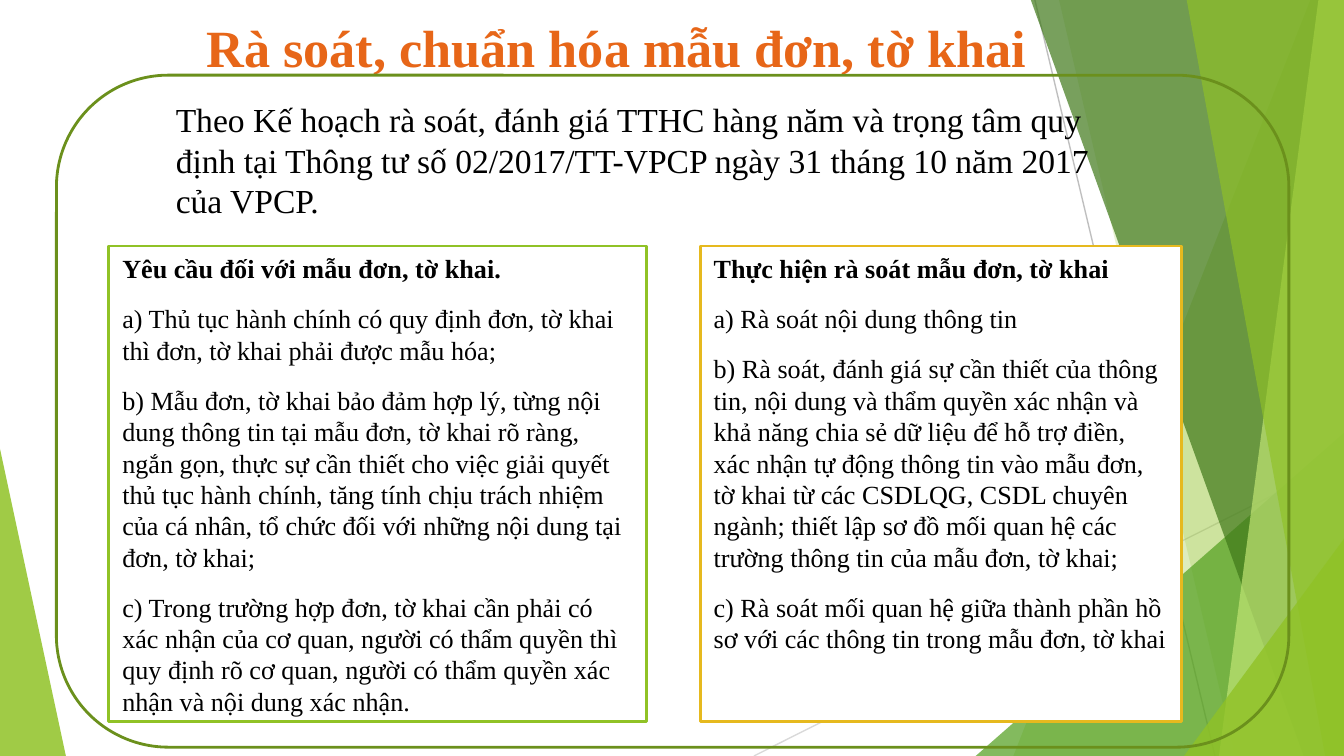
from dataclasses import dataclass
from lxml.etree import SubElement
from pptx import Presentation
from pptx.dml.color import RGBColor
from pptx.enum.shapes import MSO_CONNECTOR, MSO_SHAPE
from pptx.enum.text import MSO_ANCHOR, MSO_AUTO_SIZE, PP_ALIGN
from pptx.oxml.ns import qn
from pptx.util import Inches, Pt


@dataclass(frozen=True)
class Theme:
    """Colours, font and type sizes of the slide."""
    font: str = "Times New Roman"
    ink: str = "000000"
    paper: str = "FFFFFF"
    title: str = "E76618"
    frame: str = "6B901C"
    lime: str = "90C226"
    green: str = "54A021"
    dark: str = "3F7819"
    pale: str = "C0E474"
    gold: str = "E6B91E"
    rules: tuple = ("D9D9D9", "BFBFBF")
    head: int = 28
    lead: int = 18
    body: int = 14
    gap: int = 10
    thin: float = 0.75
    edge: float = 1.5


THEME = Theme()
WIDE = 10
HIGH = WIDE * 9 / 16
LEFT = (
    "Yêu cầu đối với mẫu đơn, tờ khai.",
    "a) Thủ tục hành chính có quy định đơn, tờ khai thì đơn, tờ khai phải được mẫu hóa;",
    "b) Mẫu đơn, tờ khai bảo đảm hợp lý, từng nội dung thông tin tại mẫu đơn, tờ khai "
    "rõ ràng, ngắn gọn, thực sự cần thiết cho việc giải quyết thủ tục hành chính, tăng "
    "tính chịu trách nhiệm của cá nhân, tổ chức đối với những nội dung tại đơn, tờ khai;",
    "c) Trong trường hợp đơn, tờ khai cần phải có xác nhận của cơ quan, người có thẩm "
    "quyền thì quy định rõ cơ quan, người có thẩm quyền xác nhận và nội dung xác nhận.",
)
RIGHT = (
    "Thực hiện rà soát mẫu đơn, tờ khai",
    "a) Rà soát nội dung thông tin",
    "b) Rà soát, đánh giá sự cần thiết của thông tin, nội dung và thẩm quyền xác nhận và "
    "khả năng chia sẻ dữ liệu để hỗ trợ điền, xác nhận tự động thông tin vào mẫu đơn, tờ "
    "khai từ các CSDLQG, CSDL chuyên ngành; thiết lập sơ đồ mối quan hệ các trường thông "
    "tin của mẫu đơn, tờ khai;",
    "c) Rà soát mối quan hệ giữa thành phần hồ sơ với các thông tin trong mẫu đơn, tờ khai",
)
TITLE = "Rà soát, chuẩn hóa mẫu đơn, tờ khai"
LEAD = ("Theo Kế hoạch rà soát, đánh giá TTHC hàng năm và trọng tâm quy định tại Thông tư "
        "số 02/2017/TT-VPCP ngày 31 tháng 10 năm 2017 của VPCP.")


def tint(code):
    """Turn a hex code into a colour."""
    return RGBColor.from_string(code)


def place(shape, box):
    """Move and size a shape to a box in inches."""
    shape.left, shape.top, shape.width, shape.height = map(Inches, box)


def write(para, text, size, code, bold=False):
    """Add one formatted run to a paragraph."""
    run = para.add_run()
    run.text = text
    run.font.name = THEME.font
    run.font.size = Pt(size)
    run.font.bold = bold
    run.font.color.rgb = tint(code)


def wedge(slide, box, points, code, alpha):
    """Draw a see-through polygon from points relative to the box."""
    spots = [(Inches(box[0] + x), Inches(box[1] + y)) for x, y in points]
    build = slide.shapes.build_freeform(*spots[0])
    build.add_line_segments(spots[1:], close=True)
    shape = build.convert_to_shape()
    shape.shadow.inherit = False
    shape.fill.solid()
    shape.fill.fore_color.rgb = tint(code)
    shape.line.fill.background()
    fill = shape._element.spPr.find(qn("a:solidFill"))
    SubElement(fill[0], qn("a:alpha"), val=str(alpha * 1000))


def rule(slide, box, ends, code):
    """Draw a thin line between two points relative to the box."""
    (x1, y1), (x2, y2) = ends
    spots = (box[0] + x1, box[1] + y1, box[0] + x2, box[1] + y2)
    line = slide.shapes.add_connector(MSO_CONNECTOR.STRAIGHT, *map(Inches, spots))
    line.line.color.rgb = tint(code)
    line.line.width = Pt(THEME.thin)
    SubElement(line._element.spPr, qn("a:effectLst"))


def decor(slide, box):
    """Place the facets and fine lines within the box."""
    wide, high = box[2:]
    wedge(slide, box, [(0, 3.34), (0.49, high), (0, high)], THEME.lime, 85)
    lines = [((5.61, high), (wide, 3.42)), ((7.7, 0), (9.04, high))]
    for ends, code in zip(lines, THEME.rules):
        rule(slide, box, ends, code)
    facets = [
        (9.75, 0, 7.54, THEME.lime, 30),
        (7.88, 0, 9.19, THEME.lime, 20),
        (wide, 3.22, 7.26, THEME.green, 72),
        (7.67, 0, 9.7, THEME.dark, 70),
        (9.81, 0, 9.07, THEME.pale, 70),
        (8.83, 0, 9.86, THEME.lime, 65),
        (wide, 4.01, 8.81, THEME.lime, 80),
    ]
    for top, rise, foot, code, alpha in facets:
        points = [(top, rise), (foot, high), (wide, high), (wide, rise)]
        wedge(slide, box, points, code, alpha)


def panel(slide, holder, box, lines, code):
    """Fill a body placeholder as a bordered panel with a bold heading."""
    slide.shapes._spTree.append(holder._element)
    place(holder, box)
    holder.fill.solid()
    holder.fill.fore_color.rgb = tint(THEME.paper)
    holder.line.color.rgb = tint(code)
    holder.line.width = Pt(THEME.edge)
    frame = holder.text_frame
    frame.auto_size = MSO_AUTO_SIZE.NONE
    for i, text in enumerate(lines):
        para = frame.add_paragraph() if i else frame.paragraphs[0]
        para.space_before = Pt(THEME.gap)
        props = para._p.get_or_add_pPr()
        props.set("marL", "0")
        props.set("indent", "0")
        SubElement(props, qn("a:buNone"))
        write(para, text, THEME.body, THEME.ink, bold=i == 0)


def header(slide, box):
    """Place the slide title in the box."""
    title = slide.shapes.title
    slide.shapes._spTree.append(title._element)
    place(title, box)
    title.text_frame.auto_size = MSO_AUTO_SIZE.NONE
    title.text_frame.vertical_anchor = MSO_ANCHOR.TOP
    para = title.text_frame.paragraphs[0]
    para.alignment = PP_ALIGN.CENTER
    write(para, TITLE, THEME.head, THEME.title, bold=True)


def outline(slide, box):
    """Draw the rounded frame around the content."""
    shape = slide.shapes.add_shape(MSO_SHAPE.ROUNDED_RECTANGLE, *map(Inches, box))
    shape.shadow.inherit = False
    shape.fill.background()
    shape.line.color.rgb = tint(THEME.frame)
    shape.line.width = Pt(THEME.edge)


def intro(slide, box):
    """Place the lead paragraph in the box."""
    frame = slide.shapes.add_textbox(*map(Inches, box)).text_frame
    frame.word_wrap = True
    frame.auto_size = MSO_AUTO_SIZE.SHAPE_TO_FIT_TEXT
    write(frame.paragraphs[0], LEAD, THEME.lead, THEME.ink)


def main():
    """Build and save the slide."""
    deck = Presentation()
    deck.slide_width, deck.slide_height = Inches(WIDE), Inches(HIGH)
    slide = deck.slides.add_slide(deck.slide_layouts[3])
    first, second = list(slide.placeholders)[1:]
    decor(slide, (0, 0, WIDE, HIGH))
    panel(slide, first, (0.81, 1.83, 4, 3.54), LEFT, THEME.lime)
    panel(slide, second, (5.21, 1.83, 3.58, 3.54), RIGHT, THEME.gold)
    header(slide, (0.75, 0.06, 7.67, 0.65))
    outline(slide, (0.42, 0.56, 9.17, 5))
    intro(slide, (1.21, 0.69, 7.04, 1.01))
    deck.save("out.pptx")


if __name__ == "__main__":
    main()
